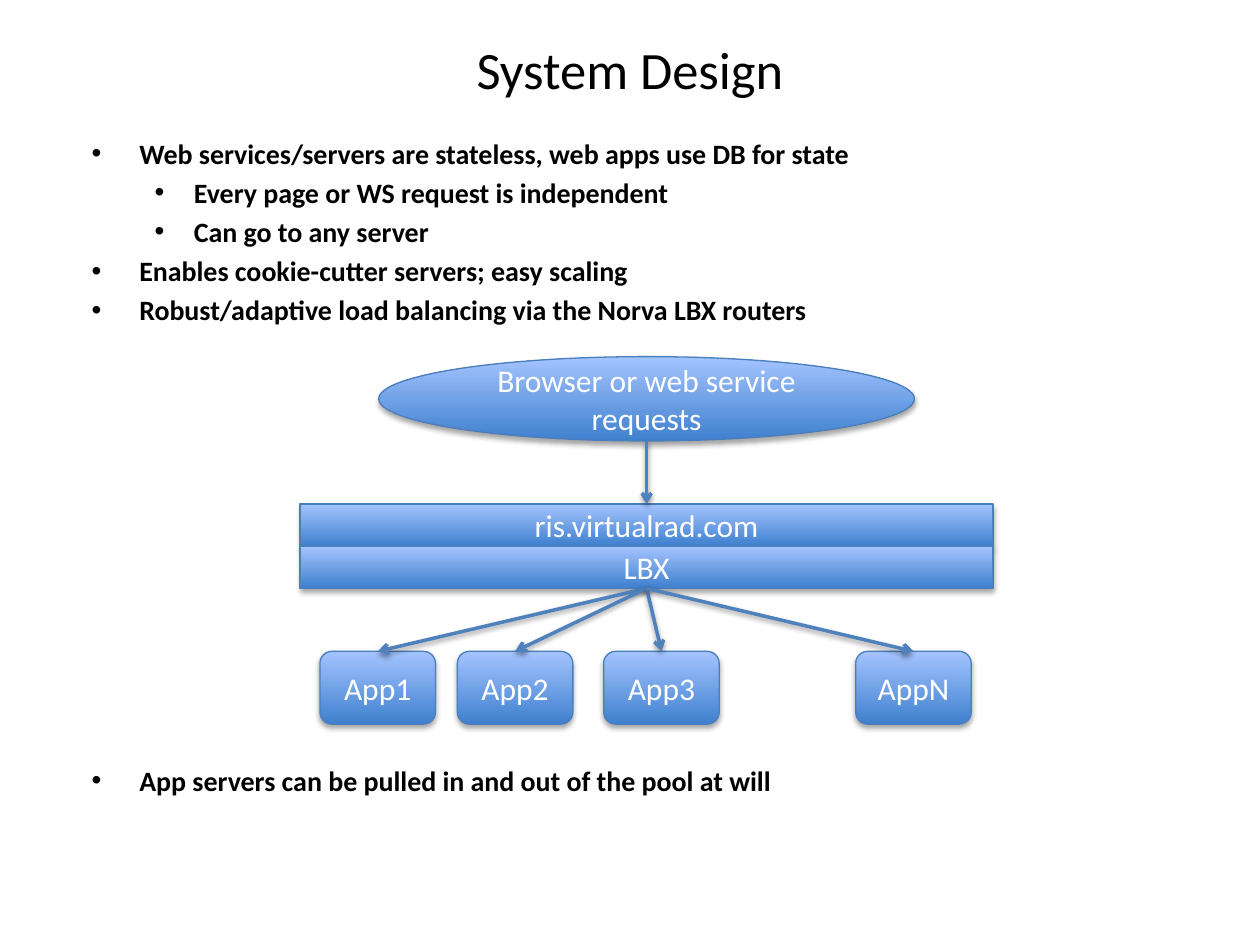
from lxml.etree import SubElement as Sub
from pptx import Presentation
from pptx.dml.color import RGBColor
from pptx.enum.shapes import MSO_CONNECTOR as Link, MSO_SHAPE as Kind
from pptx.enum.text import MSO_ANCHOR as Anchor, PP_ALIGN as Align
from pptx.oxml.ns import qn
from pptx.util import Cm, Pt

POINTS = [
    (0, "Web services/servers are stateless, web apps use DB for state"),
    (1, "Every page or WS request is independent"),
    (1, "Can go to any server"),
    (0, "Enables cookie-cutter servers; easy scaling"),
    (0, "Robust/adaptive load balancing via the Norva LBX routers"),
]
CLOSE = [(0, "App servers can be pulled in and out of the pool at will")]
APPS = [("App1", 0.4), ("App2", 3.17), ("App3", 6.12), ("AppN", 11.2)]
INDENT = [(0.96, 0.96), (2.06, 0.79)]


def tint(code):
    """Turn a hex string into a colour."""
    return RGBColor.from_string(code)


def style(para, size, code, bold=False):
    """Set the font of a paragraph."""
    font = para.font
    font.name, font.size, font.bold = "Calibri", Pt(size), bold
    font.color.rgb = tint(code)


def shade(item, drop, alpha):
    """Give a shape or connector a soft shadow below it."""
    list_ = Sub(item._element.spPr, qn("a:effectLst"))
    glow = Sub(list_, qn("a:outerShdw"), blurRad=str(Pt(3.1)),
               dist=str(Pt(drop)), dir="5400000", rotWithShape="0")
    ink = Sub(glow, qn("a:srgbClr"), val="000000")
    Sub(ink, qn("a:alpha"), val=str(alpha * 1000))


def head(slide, left, top, width, height):
    """Place the title."""
    title = slide.shapes.title
    title.left, title.top = Cm(left), Cm(top)
    title.width, title.height = Cm(width), Cm(height)
    frame = title.text_frame
    frame.text = "System Design"
    frame.vertical_anchor = Anchor.MIDDLE
    para = frame.paragraphs[0]
    para.alignment = Align.CENTER
    style(para, 30, "000000")


def bullets(slide, rows, left, top, width, height):
    """Place a list of bullets on two levels."""
    box = slide.shapes.add_textbox(Cm(left), Cm(top), Cm(width), Cm(height))
    frame = box.text_frame
    frame.word_wrap = True
    for i, (level, text) in enumerate(rows):
        para = frame.add_paragraph() if i else frame.paragraphs[0]
        para.text, para.level = text, level
        if i:
            para.space_before = Pt(3.2)
        margin, hang = INDENT[level]
        props = para._p.get_or_add_pPr()
        props.set("marL", str(Cm(margin)))
        props.set("indent", str(-Cm(hang)))
        Sub(props, qn("a:buFont"), typeface="Arial")
        Sub(props, qn("a:buChar"), char="•")
        style(para, 16, "000000", True)


def node(slide, kind, text, left, top, width, height):
    """Draw one labelled blue shape."""
    shape = slide.shapes.add_shape(kind, Cm(left), Cm(top), Cm(width), Cm(height))
    shape.fill.gradient()
    shape.fill.gradient_angle = 90
    for stop, code in zip(shape.fill.gradient_stops, ("3F80CE", "A4C4FF")):
        stop.color.rgb = tint(code)
    shape.line.color.rgb = tint("4B7EBC")
    shape.line.width = Pt(0.75)
    shade(shape, 1.8, 35)
    frame = shape.text_frame
    frame.text, frame.word_wrap = text, True
    frame.vertical_anchor = Anchor.MIDDLE
    para = frame.paragraphs[0]
    para.alignment = Align.CENTER
    style(para, 18, "FFFFFF")


def arrow(slide, x1, y1, x2, y2):
    """Draw an arrow between two points."""
    link = slide.shapes.add_connector(Link.STRAIGHT, Cm(x1), Cm(y1), Cm(x2), Cm(y2))
    link.line.color.rgb = tint("4F81BD")
    link.line.width = Pt(2)
    Sub(link.line._get_or_add_ln(), qn("a:tailEnd"), type="arrow")
    shade(link, 1.6, 38)


def flow(slide, left, top, width, height):
    """Draw requests going through the router to the app servers."""
    mid = left + width / 2
    oval, tall = 10.8, 1.7
    bar, thick = top + 2.97, 0.85
    base = bar + 2 * thick
    wide, high = 2.33, 1.47
    row = top + height - high
    for i, text in enumerate(("ris.virtualrad.com", "LBX")):
        node(slide, Kind.RECTANGLE, text, left, bar + i * thick, width, thick)
    for text, shift in APPS:
        node(slide, Kind.ROUNDED_RECTANGLE, text, left + shift, row, wide, high)
    for _, shift in APPS:
        arrow(slide, mid, base, left + shift + wide / 2, row)
    node(slide, Kind.OVAL, "Browser or web service requests",
         mid - oval / 2, top, oval, tall)
    arrow(slide, mid, top + tall, mid, bar)


def main():
    """Build and save the slide."""
    deck = Presentation()
    deck.slide_width, deck.slide_height = Cm(25.4), Cm(19.05)
    slide = deck.slides.add_slide(deck.slide_layouts[5])
    head(slide, 0, 0.43, 25.4, 1.9)
    bullets(slide, POINTS, 1.6, 2.62, 18, 4.3)
    flow(slide, 6.05, 7.19, 13.97, 7.41)
    bullets(slide, CLOSE, 1.6, 15.26, 18, 1)
    deck.save("out.pptx")


if __name__ == "__main__":
    main()
